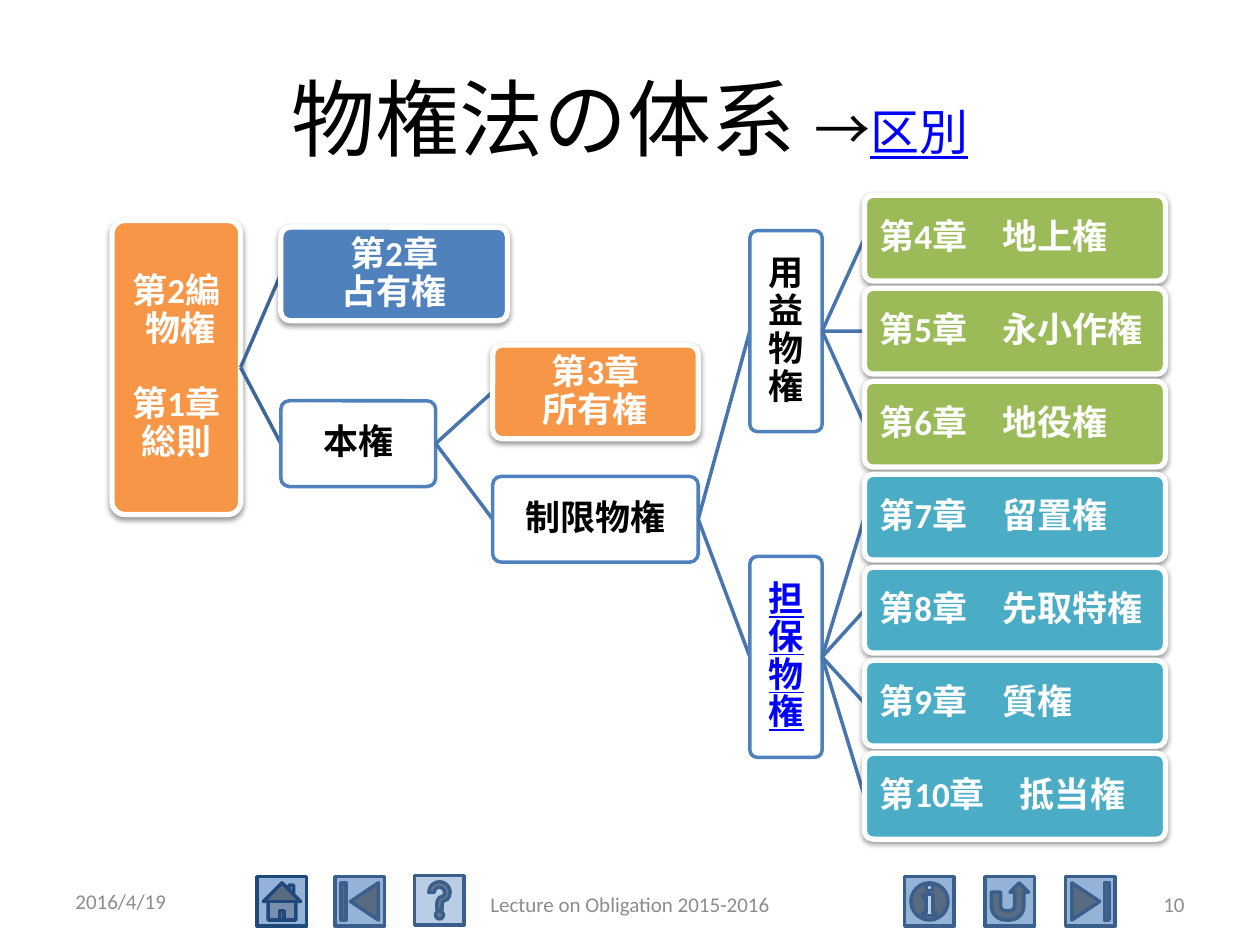
import pptx
import pptx.util
import pptx.dml.color
import pptx.enum.shapes
import pptx.enum.text
import pptx.oxml
from dataclasses import dataclass

Pt = pptx.util.Pt
SHAPE = pptx.enum.shapes.MSO_SHAPE
ALIGN = pptx.enum.text.PP_ALIGN
MIDDLE = pptx.enum.text.MSO_ANCHOR.MIDDLE
NS = 'xmlns:a="http://schemas.openxmlformats.org/drawingml/2006/main"'
SHADOW = (f'<a:outerShdw {NS} blurRad="39400" dist="20300" dir="5400000" rotWithShape="0">'
          '<a:srgbClr val="000000"><a:alpha val="38000"/></a:srgbClr></a:outerShdw>')
RIGHT_SIDE, LEFT_SIDE = 3, 1


@dataclass(frozen=True)
class Theme:
    font: str = "Calibri"
    black: str = "000000"
    white: str = "FFFFFF"
    link: str = "0000FF"
    footer: str = "8C8C8C"
    orange: str = "F79646"
    blue: str = "4F81BD"
    green: str = "9BBB59"
    teal: str = "4BACC6"
    root_branch: str = "3F6797"
    branch: str = "4875AC"
    button: str = "95B3D7"
    help_button: str = "B9CDE5"
    button_line: str = "3A5F8C"
    home_line: str = "1F497D"
    title_size: int = 48
    arrow_size: int = 32
    link_size: int = 28
    box_size: int = 20
    footer_size: int = 12


def rgb(value):
    return pptx.dml.color.RGBColor.from_string(value)


class SlideBuilder:
    def __init__(self, slide, theme):
        self.slide = slide
        self.theme = theme

    def style_font(self, font, size, color, bold=False, underline=False):
        font.name = self.theme.font
        font.size = Pt(size)
        font.color.rgb = rgb(color)
        font.bold = bold
        font.underline = underline

    def shape(self, kind, place, fill, line, width):
        shape = self.slide.shapes.add_shape(kind, *map(Pt, place))
        shape.shadow.inherit = False
        shape.fill.solid()
        shape.fill.fore_color.rgb = rgb(fill)
        shape.line.color.rgb = rgb(line)
        shape.line.width = Pt(width)
        return shape

    def text(self, place, align):
        frame = self.slide.shapes.add_textbox(*map(Pt, place)).text_frame
        frame.word_wrap = True
        frame.vertical_anchor = MIDDLE
        frame.paragraphs[0].alignment = align
        return frame.paragraphs[0]

    def title(self, place, parts):
        paragraph = self.text(place, ALIGN.CENTER)
        for words, size, color, underline in parts:
            run = paragraph.add_run()
            run.text = words
            self.style_font(run.font, size, color, underline=underline)

    def footer(self, place, words, align):
        paragraph = self.text(place, align)
        paragraph.text = words
        self.style_font(paragraph.font, self.theme.footer_size, self.theme.footer)

    def box(self, place, words, fill=None, link=False, align=ALIGN.CENTER):
        """A filled box has a white rim and a shadow; an unfilled one a blue outline."""
        t = self.theme
        rim = (t.white, 3) if fill else (t.blue, 2)
        box = self.shape(SHAPE.ROUNDED_RECTANGLE, place, fill or t.white, *rim)
        box.adjustments[0] = 0.1
        if fill:
            effects = box._element.spPr.find(pptx.oxml.ns.qn("a:effectLst"))
            effects.append(pptx.oxml.parse_xml(SHADOW))
        frame = box.text_frame
        frame.word_wrap = True
        frame.vertical_anchor = MIDDLE
        frame.margin_left = frame.margin_right = Pt(2.5)
        frame.margin_top = frame.margin_bottom = Pt(2.5)
        paragraph = frame.paragraphs[0]
        paragraph.text = words
        paragraph.alignment = align
        paragraph.line_spacing = 0.9
        color = t.link if link else t.white if fill else t.black
        self.style_font(paragraph.font, t.box_size, color, True, link)
        return box

    def branch(self, parent, child, color):
        """Join parent to child with a line lying just beneath the child."""
        line = self.slide.shapes.add_connector(
            pptx.enum.shapes.MSO_CONNECTOR.STRAIGHT, 0, 0, 0, 0)
        line.begin_connect(parent, RIGHT_SIDE)
        line.end_connect(child, LEFT_SIDE)
        line.line.color.rgb = rgb(color)
        line.line.width = Pt(2)
        line._element.spPr.append(pptx.oxml.parse_xml(f"<a:effectLst {NS}/>"))
        child._element.addprevious(line._element)


def main():
    deck = pptx.Presentation()
    deck.slide_width, deck.slide_height = Pt(720), Pt(540)
    theme = Theme()
    page = SlideBuilder(deck.slides.add_slide(deck.slide_layouts[6]), theme)

    # Navigation buttons
    for kind, left, top, fill, line in (
        (SHAPE.ACTION_BUTTON_BEGINNING, 191.5, 501, theme.button, theme.button_line),
        (SHAPE.ACTION_BUTTON_END, 609, 501, theme.button, theme.button_line),
        (SHAPE.ACTION_BUTTON_RETURN, 563, 501, theme.button, theme.button_line),
        (SHAPE.ACTION_BUTTON_HOME, 147, 501, theme.button, theme.home_line),
        (SHAPE.ACTION_BUTTON_INFORMATION, 517, 501, theme.button, theme.button_line),
        (SHAPE.ACTION_BUTTON_HELP, 237, 500.4, theme.help_button, theme.button_line),
    ):
        page.shape(kind, (left, top, 28.3, 28.3), fill, line, 2)

    # Title and footer
    page.title((36, 21.6, 648, 90), (
        ("物権法の体系 ", theme.title_size, theme.black, False),
        ("→", theme.arrow_size, theme.black, False),
        ("区別", theme.link_size, theme.link, True),
    ))
    page.footer((36, 500.5, 168, 28.8), "2016/4/19", ALIGN.LEFT)
    page.footer((246, 502.5, 228, 28.8), "Lecture on Obligation 2015-2016", ALIGN.CENTER)
    page.footer((516, 502, 168, 28.8), "10", ALIGN.RIGHT)

    # Trunk of the tree
    root = page.box((64, 126, 73.5, 168), "第2編\n 物権\n\n第1章\n総則", theme.orange)
    possession = page.box((160.5, 129.8, 129.5, 53.5), "第2章\n占有権", theme.blue)
    title_right = page.box((160.5, 229, 88.5, 49), "本権")
    ownership = page.box((281.5, 197.2, 117.5, 53.5), "第3章\n所有権", theme.orange)
    limited = page.box((281.5, 272.2, 117.5, 49), "制限物権")
    usufruct = page.box((428.5, 131.8, 41.3, 114.8), "用益物権")
    security = page.box((428.5, 318, 41.3, 114.8), "担保物権", link=True)

    for child in (possession, title_right):
        page.branch(root, child, theme.root_branch)
    for parent, children in ((title_right, (ownership, limited)),
                             (limited, (usufruct, security))):
        for child in children:
            page.branch(parent, child, theme.branch)

    # Chapters, stacked at an equal pitch
    chapters = [(usufruct, theme.green, right) for right in ("地上権", "永小作権", "地役権")]
    chapters += [(security, theme.teal, right)
                 for right in ("留置権", "先取特権", "質権", "抵当権")]
    for row, (group, fill, right) in enumerate(chapters):
        chapter = page.box((494, 111.6 + row * 53.15, 172, 49),
                           f" 第{row + 4}章　{right}", fill, align=ALIGN.LEFT)
        page.branch(group, chapter, theme.branch)

    deck.save("out.pptx")


if __name__ == "__main__":
    main()
